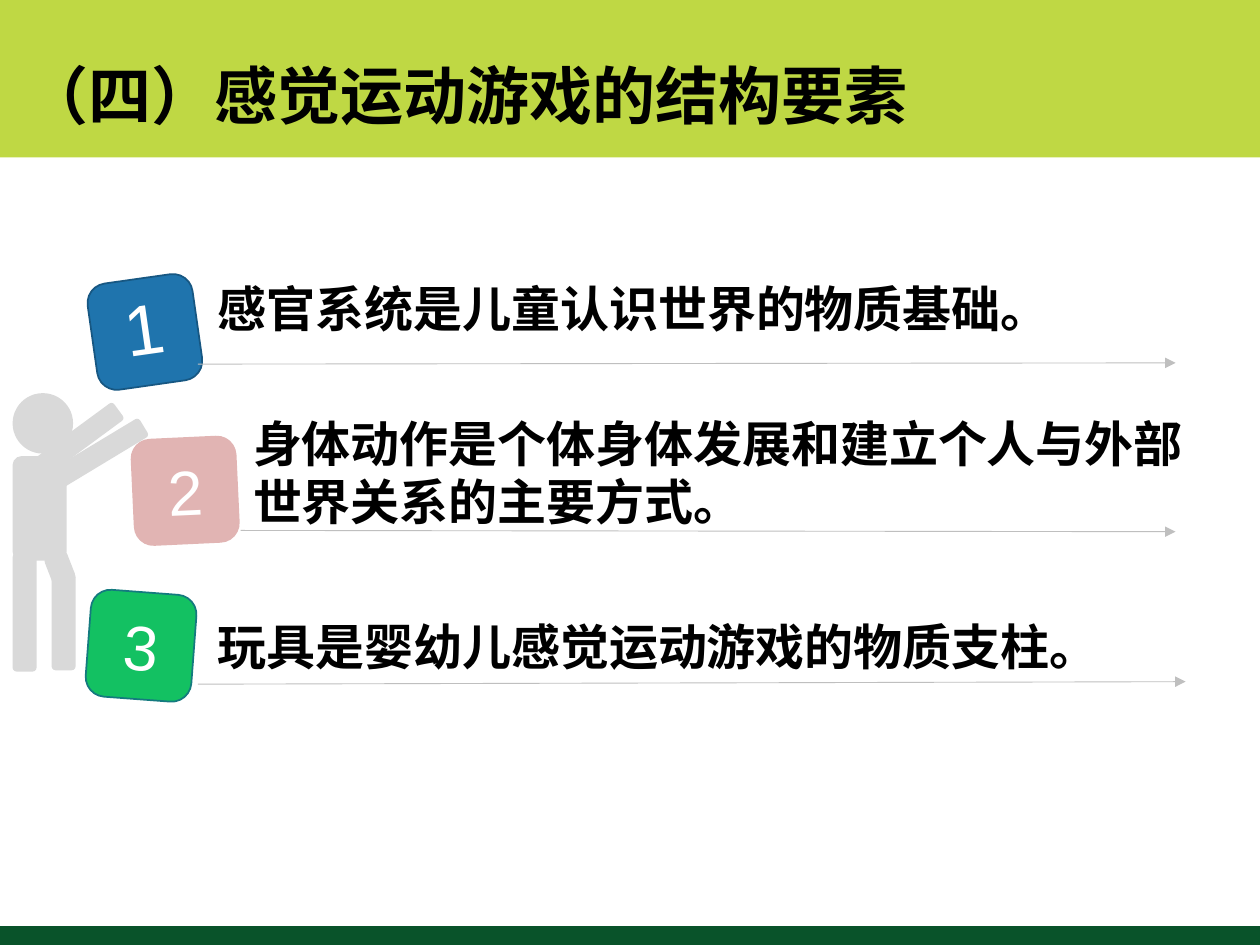
import pptx
import pptx.dml.color
import pptx.enum.shapes
import pptx.enum.text
import pptx.oxml.ns
import pptx.util
from lxml import etree
from pptx.util import Inches

SHAPE = pptx.enum.shapes.MSO_SHAPE
ALIGN = pptx.enum.text.PP_ALIGN
ANCHOR = pptx.enum.text.MSO_ANCHOR
qn = pptx.oxml.ns.qn

COLORS = {
    "band": "BFD844", "footer": "09532A", "figure": "D9D9D9", "rule": "BFBFBF",
    "ink": "000000", "white": "FFFFFF",
    "blue": "1F74AD", "blue_edge": "175782", "pink": "E1B4B3",
    "green": "13C162", "green_edge": "147A7F",
}
CJK_FONT, NUMBER_FONT = "Noto Sans CJK SC", "Arial"
BADGE_SIZE = (0.84, 0.85)

# Content
TITLE = ("（四）感觉运动游戏的结构要素", (0.1, 0.4, 7.55, 0.71))
POINTS = [
    dict(number="1", size=40.5, spacing=0.9, badge=(0.73, 2.21), turn=-8.1,
         fill="blue", edge="blue_edge", rule=(1.57, 2.89, 9.33, 2.88),
         text="感官系统是儿童认识世界的物质基础。", box=(1.63, 2.16, 7.22, 0.57)),
    dict(number="2", size=36, spacing=None, badge=(1.05, 3.47), turn=-2.7,
         fill="pink", edge=None, rule=(1.91, 4.21, 9.33, 4.22),
         text="身体动作是个体身体发展和建立个人与外部世界关系的主要方式。",
         box=(1.91, 3.23, 7.69, 1.04)),
    dict(number="3", size=36, spacing=None, badge=(0.7, 4.7), turn=4.3,
         fill="green", edge="green_edge", rule=(1.57, 5.43, 9.41, 5.41),
         text="玩具是婴幼儿感觉运动游戏的物质支柱。", box=(1.63, 4.84, 7.83, 0.57)),
]
# Body parts of the figure: place, rotation, corner radius (None = preset)
LIMBS = [
    ((0.1, 3.62, 0.43, 0.83), 0, None),
    ((0.1, 4.39, 0.19, 0.94), 0, None),
    ((0.38, 4.37, 0.19, 0.28), -21.4, 0.296),
    ((0.41, 4.55, 0.19, 0.77), 0, None),
    ((0.53, 3.09, 0.17, 0.81), 53.7, None),
    ((0.71, 3.19, 0.17, 0.81), 58.9, None),
]
HEAD = (0.1, 3.12, 0.48, 0.48)


def color(name):
    return pptx.dml.color.RGBColor.from_string(COLORS[name])


def add_block(page, kind, place, fill, turn=0, radius=None, edge=None):
    block = page.shapes.add_shape(kind, *map(Inches, place))
    block.shadow.inherit = False
    block.rotation = turn
    if radius is not None:
        block.adjustments[0] = radius
    block.fill.solid()
    block.fill.fore_color.rgb = color(fill)
    if edge:
        block.line.color.rgb = color(edge)
        block.line.width = pptx.util.Pt(1)
    else:
        block.line.fill.background()
    return block


def add_span(para, text, size, font, ink, bold=False):
    span = para.add_run()
    span.text = text
    span.font.size = pptx.util.Pt(size)
    span.font.bold = bold
    span.font.color.rgb = color(ink)
    span.font.name = font
    etree.SubElement(span._r.get_or_add_rPr(), qn("a:ea"), typeface=font)


def add_text(page, text, place, size):
    frame = page.shapes.add_textbox(*map(Inches, place)).text_frame
    frame.word_wrap = True
    frame.auto_size = pptx.enum.text.MSO_AUTO_SIZE.SHAPE_TO_FIT_TEXT
    add_span(frame.paragraphs[0], text, size, CJK_FONT, "ink", bold=True)


def add_badge(page, point):
    badge = add_block(page, SHAPE.ROUNDED_RECTANGLE, point["badge"] + BADGE_SIZE,
                      point["fill"], point["turn"], 0.186, point["edge"])
    badge.text_frame.vertical_anchor = ANCHOR.MIDDLE
    para = badge.text_frame.paragraphs[0]
    para.alignment = ALIGN.CENTER
    if point["spacing"]:
        para.line_spacing = point["spacing"]
    add_span(para, point["number"], point["size"], NUMBER_FONT, "white")


def add_arrow(page, ends):
    arrow = page.shapes.add_connector(
        pptx.enum.shapes.MSO_CONNECTOR.STRAIGHT, *map(Inches, ends))
    arrow.line.color.rgb = color("rule")
    arrow.line.width = pptx.util.Pt(0.5)
    etree.SubElement(arrow.line._get_or_add_ln(), qn("a:tailEnd"), type="triangle")
    etree.SubElement(arrow._element.spPr, qn("a:effectLst"))


def main():
    deck = pptx.Presentation()
    deck.slide_width, deck.slide_height = Inches(10), Inches(7.5)
    page = deck.slides.add_slide(deck.slide_layouts[6])

    # Header and footer bands
    add_block(page, SHAPE.RECTANGLE, (0, 0, 10, 1.25), "band")
    add_block(page, SHAPE.RECTANGLE, (0, 7.35, 10, 0.15), "footer")

    # Numbered badges with their arrows, lowest at the back
    for point in reversed(POINTS):
        add_badge(page, point)
        add_arrow(page, point["rule"])

    # Standing figure
    for place, turn, radius in LIMBS:
        add_block(page, SHAPE.ROUNDED_RECTANGLE, place, "figure", turn, radius)
    add_block(page, SHAPE.OVAL, HEAD, "figure")

    # Title and statements
    add_text(page, *TITLE, 36)
    for point in POINTS:
        add_text(page, point["text"], point["box"], 28)

    deck.save("out.pptx")


if __name__ == "__main__":
    main()
